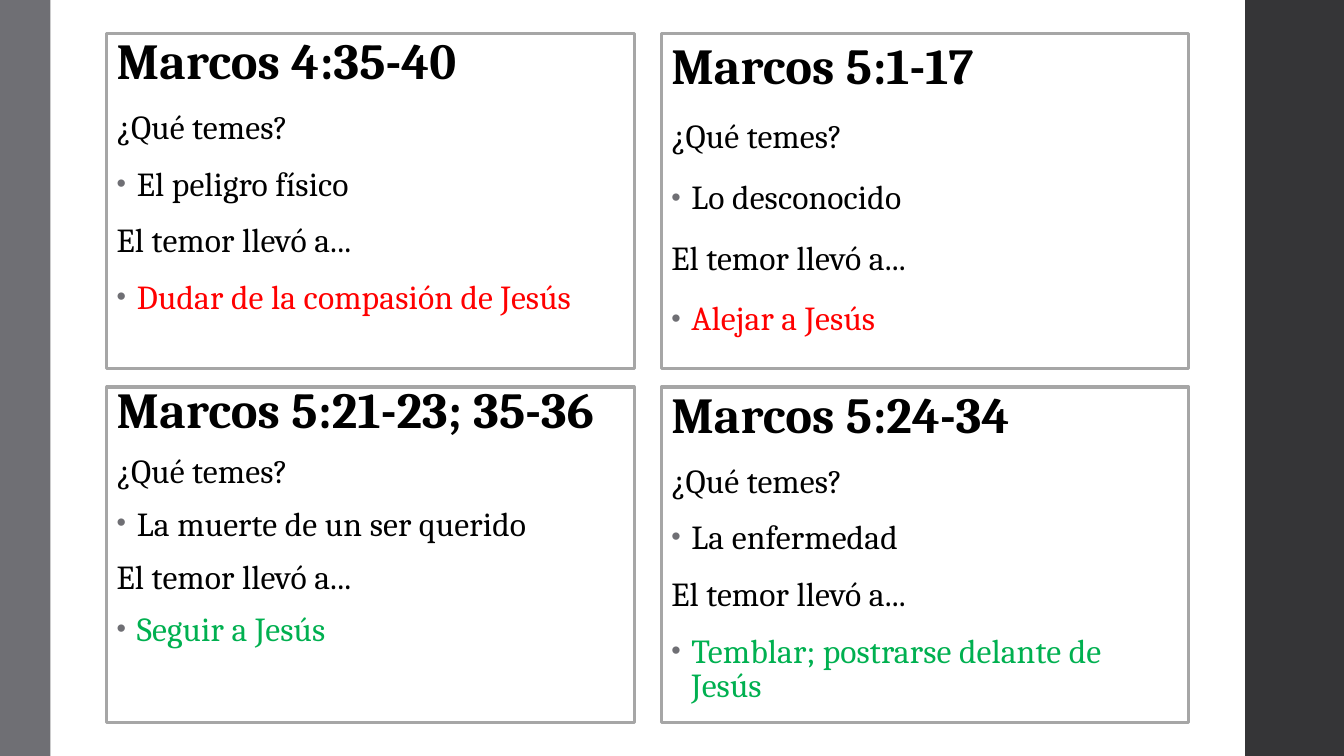
"""Build a slide of four panels on fear in the Gospel of Mark."""
from dataclasses import dataclass

from lxml import etree
from pptx import Presentation
from pptx import util as u
from pptx.dml.color import RGBColor
from pptx.enum import shapes, text
from pptx.oxml import ns

WHITE = RGBColor(0xFF, 0xFF, 0xFF)
BLACK = RGBColor(0x00, 0x00, 0x00)
RED = RGBColor(0xFF, 0x00, 0x00)
GREEN = RGBColor(0x00, 0xB0, 0x50)
BORDER_GRAY = RGBColor(0xA6, 0xA6, 0xA6)
SIDE_GRAY = RGBColor(0x6F, 0x6F, 0x74)
DARK_GRAY = RGBColor(0x35, 0x35, 0x37)

PAGE_WIDTH, PAGE_HEIGHT = 13.33, 7.5
PANEL_WIDTH, PANEL_HEIGHT = 5.23, 3.33
PANEL_LEFT, PANEL_TOP = 1.06, 0.33
COLUMN_STEP, ROW_STEP = 5.5, 3.51


@dataclass(frozen=True)
class Panel:
    """A passage with its fear and the response to it."""
    row: int
    column: int
    passage: str
    fear: str
    response: str
    color: RGBColor
    line_spacing: float


PANELS = (
    Panel(0, 0, "Marcos 4:35-40", "El peligro físico",
          "Dudar de la compasión de Jesús", RED, 0.85),
    Panel(0, 1, "Marcos 5:1-17", "Lo desconocido", "Alejar a Jesús", RED, 0.95),
    Panel(1, 0, "Marcos 5:21-23; 35-36", "La muerte de un ser querido",
          "Seguir a Jesús", GREEN, 0.75),
    Panel(1, 1, "Marcos 5:24-34", "La enfermedad",
          "Temblar; postrarse delante de Jesús", GREEN, 0.85),
)


def add_box(page, left: float, top: float, width: float, height: float, fill: RGBColor):
    """Add a flat rectangle without an outline."""
    box = page.shapes.add_shape(shapes.MSO_SHAPE.RECTANGLE, u.Inches(left),
                                u.Inches(top), u.Inches(width), u.Inches(height))
    box.shadow.inherit = False
    box.fill.solid()
    box.fill.fore_color.rgb = fill
    box.line.fill.background()
    return box


def add_bullet(para) -> None:
    """Give a paragraph a small gray hanging bullet."""
    props = para._p.get_or_add_pPr()
    props.set("marL", str(u.Inches(0.2)))
    props.set("indent", str(-u.Inches(0.2)))
    color = etree.SubElement(props, ns.qn("a:buClr"))
    etree.SubElement(color, ns.qn("a:srgbClr"), val=str(SIDE_GRAY))
    etree.SubElement(props, ns.qn("a:buSzPct"), val="80000")
    etree.SubElement(props, ns.qn("a:buFont"), typeface="Arial")
    etree.SubElement(props, ns.qn("a:buChar"), char="•")


def add_text(frame, words: str, *, line_spacing: float, size: float = 24,
             bold: bool = False, color: RGBColor = BLACK,
             bullet: bool = False, first: bool = False) -> None:
    """Write one formatted paragraph into a text frame."""
    para = frame.paragraphs[0] if first else frame.add_paragraph()
    if bullet:
        add_bullet(para)
    para.alignment = text.PP_ALIGN.LEFT
    para.line_spacing = line_spacing
    para.space_before = u.Pt(0 if first else 14)
    para.space_after = u.Pt(2)
    span = para.add_run()
    span.text = words
    span.font.name = "Cambria"
    span.font.size = u.Pt(size)
    span.font.bold = bold
    span.font.color.rgb = color
    span.font._element.set("spc", "10")


def add_panel(page, panel: Panel) -> None:
    """Draw one bordered panel with its five lines."""
    box = add_box(page, PANEL_LEFT + panel.column * COLUMN_STEP,
                  PANEL_TOP + panel.row * ROW_STEP, PANEL_WIDTH, PANEL_HEIGHT, WHITE)
    box.line.color.rgb = BORDER_GRAY
    box.line.width = u.Pt(2.25)
    frame = box.text_frame
    frame.word_wrap = True
    frame.vertical_anchor = text.MSO_ANCHOR.TOP
    spacing = panel.line_spacing
    add_text(frame, panel.passage, line_spacing=spacing, size=36, bold=True, first=True)
    add_text(frame, "¿Qué temes?", line_spacing=spacing)
    add_text(frame, panel.fear, line_spacing=spacing, bullet=True)
    add_text(frame, "El temor llevó a...", line_spacing=spacing)
    add_text(frame, panel.response, line_spacing=spacing, bullet=True, color=panel.color)


def main() -> None:
    """Create and save the deck."""
    deck = Presentation()
    deck.slide_width = u.Inches(PAGE_WIDTH)
    deck.slide_height = u.Inches(PAGE_HEIGHT)
    page = deck.slides.add_slide(deck.slide_layouts[6])
    page.background.fill.solid()
    page.background.fill.fore_color.rgb = WHITE
    add_box(page, 12.35, 0, PAGE_WIDTH - 12.35, PAGE_HEIGHT, DARK_GRAY)
    add_box(page, 0, 0, 0.5, PAGE_HEIGHT, SIDE_GRAY)
    for panel in PANELS:
        add_panel(page, panel)
    deck.save("out.pptx")


if __name__ == "__main__":
    main()
